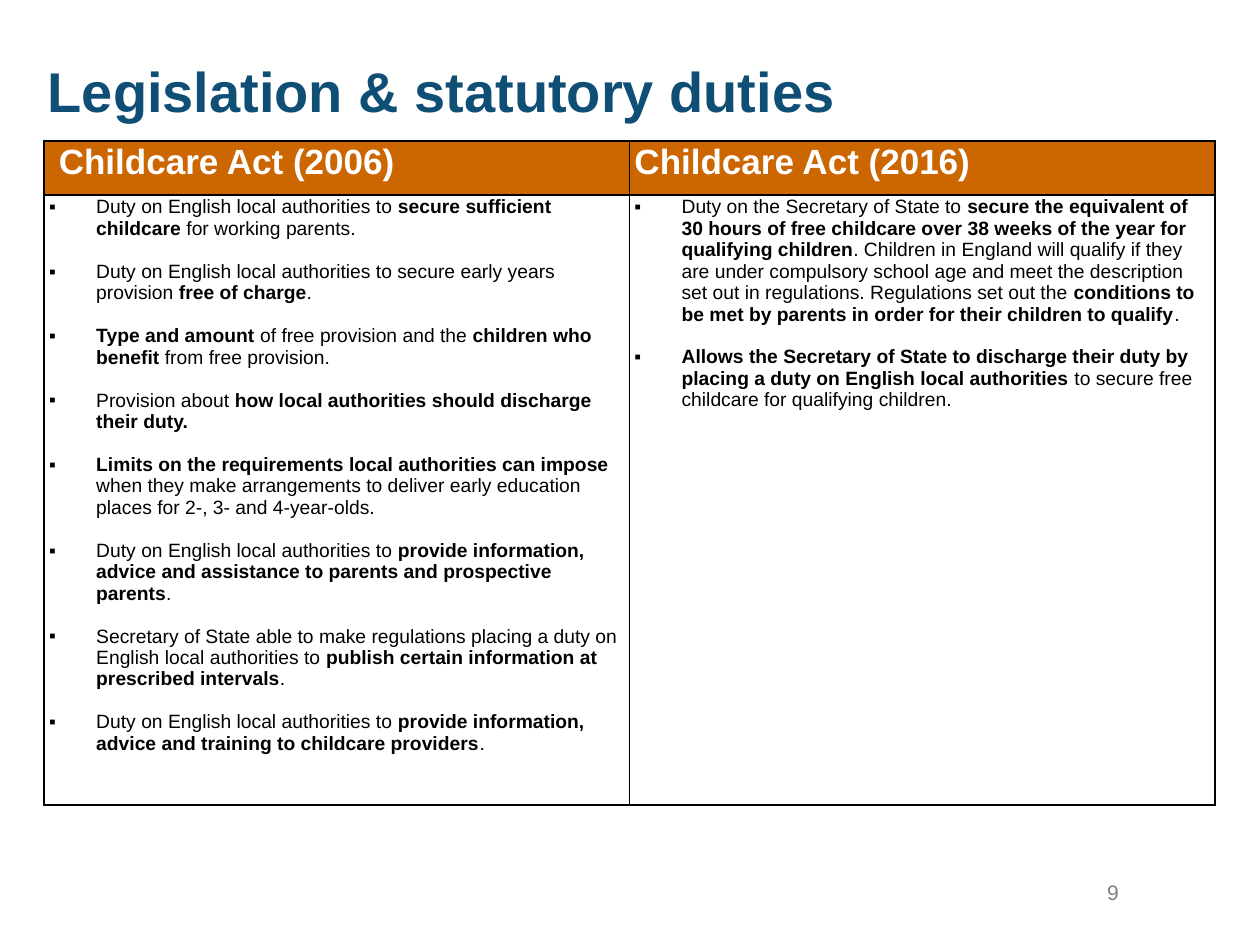
from lxml import etree
from pptx import Presentation, util as u
from pptx.dml.color import RGBColor
from pptx.enum import text
from pptx.oxml import ns

FONT = "Arial"
COLOURS = {"title": "104F75", "header": "CC6600", "white": "FFFFFF",
           "body": "000000", "number": "808080"}

# Column heading and duties; ** marks the bold stretches
ACTS = [
    (" Childcare Act (2006)", [
        "Duty on English local authorities to **secure sufficient childcare **for working parents.",
        "Duty on English local authorities to secure early years provision **free of charge**.",
        "**Type and amount **of free provision and the **children who benefit** from free provision.",
        "Provision about **how local authorities should discharge their duty.**",
        "**Limits on the requirements local authorities can impose **when they make "
        "arrangements to deliver early education places for 2-, 3- and 4-year-olds.",
        "Duty on English local authorities to **provide information, advice and "
        "assistance to parents and prospective parents**.",
        "Secretary of State able to make regulations placing a duty on English local "
        "authorities to **publish certain information at prescribed intervals**.",
        "Duty on English local authorities to **provide information, advice and "
        "training to childcare providers**.",
    ]),
    ("Childcare Act (2016)", [
        "Duty on the Secretary of State to **secure the equivalent of 30 hours of free "
        "childcare over 38 weeks of the year for qualifying children**. Children in England "
        "will qualify if they are under compulsory school age and meet the description set "
        "out in regulations. Regulations set out the **conditions to be met by parents in "
        "order for their children to qualify**.",
        "**Allows the Secretary of State to discharge their duty by placing a duty on English "
        "local authorities** to secure free childcare for qualifying children.",
    ]),
]


def style(font, size, colour, bold=False):
    font.name, font.size, font.bold = FONT, u.Pt(size), bold
    font.color.rgb = RGBColor.from_string(COLOURS[colour])


def add_bullet(paragraph, indent):
    properties = paragraph._p.get_or_add_pPr()
    properties.set("marL", str(indent))
    properties.set("indent", str(-indent))
    etree.SubElement(properties, ns.qn("a:buFont"), typeface=FONT)
    etree.SubElement(properties, ns.qn("a:buChar"), char="▪")


def add_borders(cell):
    properties = cell._tc.get_or_add_tcPr()
    for position, side in enumerate(("lnL", "lnR", "lnT", "lnB")):
        line = etree.Element(ns.qn(f"a:{side}"), w=str(u.Pt(1)))
        fill = etree.SubElement(line, ns.qn("a:solidFill"))
        etree.SubElement(fill, ns.qn("a:srgbClr"), val=COLOURS["body"])
        properties.insert(position, line)


def format_cell(cell, fill):
    cell.margin_left = cell.margin_right = u.Cm(0.1)
    cell.margin_top, cell.margin_bottom = u.Cm(0.03), 0
    cell.fill.solid()
    cell.fill.fore_color.rgb = RGBColor.from_string(COLOURS[fill])
    add_borders(cell)


def write_duties(cell, duties):
    frame = cell.text_frame
    for index, duty in enumerate(duties):
        paragraph = frame.add_paragraph() if index else frame.paragraphs[0]
        add_bullet(paragraph, u.Cm(0.95))
        if index:
            paragraph.space_before = u.Pt(12.3)
        for part, wording in enumerate(duty.split("**")):
            if wording:
                run = paragraph.add_run()
                run.text = wording
                style(run.font, 11, "body", bold=part % 2 == 1)


def place_title(slide, left, top, width, height):
    title = slide.shapes.title
    title.left, title.top, title.width, title.height = left, top, width, height
    frame = title.text_frame
    frame.text = "Legislation & statutory duties"
    frame.vertical_anchor = text.MSO_ANCHOR.MIDDLE
    frame.auto_size = text.MSO_AUTO_SIZE.NONE
    paragraph = frame.paragraphs[0]
    paragraph.alignment = text.PP_ALIGN.LEFT
    style(paragraph.runs[0].font, 32, "title", bold=True)


def place_acts(slide, left, top, width, height):
    table = slide.shapes.add_table(2, len(ACTS), left, top, width, height).table
    header_height = u.Cm(1.09)
    table.rows[0].height = header_height
    table.rows[1].height = height - header_height
    for column, (heading, duties) in enumerate(ACTS):
        header, body = table.cell(0, column), table.cell(1, column)
        format_cell(header, "header")
        format_cell(body, "white")
        header.text_frame.text = heading
        style(header.text_frame.paragraphs[0].runs[0].font, 20, "white", bold=True)
        write_duties(body, duties)


def place_number(slide, left, top, width, height):
    frame = slide.shapes.add_textbox(left, top, width, height).text_frame
    frame.word_wrap = True
    frame.text = "9"
    style(frame.paragraphs[0].runs[0].font, 12, "number")


def main():
    presentation = Presentation()
    presentation.slide_width, presentation.slide_height = u.Cm(25.4), u.Cm(19.05)
    slide = presentation.slides.add_slide(presentation.slide_layouts[5])
    # Title, table of acts, slide number
    place_title(slide, u.Cm(0.71), u.Cm(0.91), u.Cm(21.59), u.Cm(1.8))
    place_acts(slide, u.Cm(0.89), u.Cm(2.84), u.Cm(23.6), u.Cm(13.39))
    place_number(slide, u.Cm(22.07), u.Cm(17.6), u.Cm(1.42), u.Cm(1.02))
    presentation.save("out.pptx")


if __name__ == "__main__":
    main()
